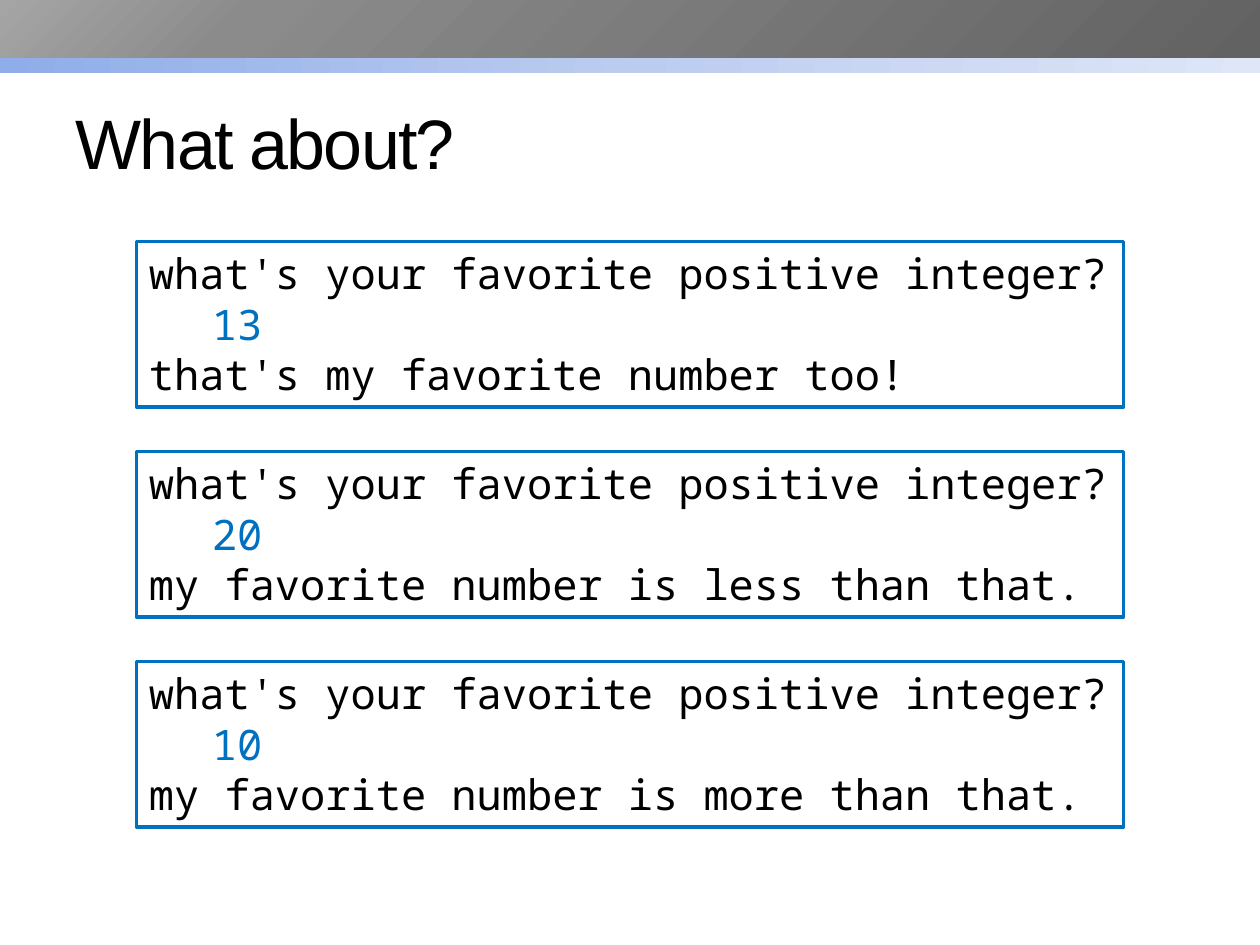
from copy import deepcopy

from pptx import Presentation
from pptx import util as u
from pptx.dml.color import RGBColor
from pptx.enum import shapes, text
from pptx.oxml.ns import qn

COLORS = {"ink": "000000", "paper": "FFFFFF", "accent": "0070C0"}
HEADING = "What about?"
QUESTION = "what's your favorite positive integer?"
DIALOGS = [
    ("13", "that's my favorite number too!"),
    ("20", "my favorite number is less than that."),
    ("10", "my favorite number is more than that."),
]
BANDS = [
    {"top": 17.28, "height": 24.48, "angle": 0,
     "stops": [(0, "8FADE9"), (0.5, "BCCCEF"), (1, "DEE6F7")]},
    {"top": 0, "height": 33.12, "angle": 135,
     "stops": [(0, "626262"), (0.8, "8B8B8B"), (1, "A5A5A5")]},
]
WIDTH, HEIGHT = 720, 540
BOX_LEFT, BOX_TOP, BOX_WIDTH, BOX_HEIGHT, BOX_PITCH = 78, 138, 564, 94.5, 120


def rgb(value):
    return RGBColor.from_string(value)


def add_rectangle(slide, left, top, width, height):
    rectangle = slide.shapes.add_shape(
        shapes.MSO_SHAPE.RECTANGLE, u.Pt(left), u.Pt(top), u.Pt(width), u.Pt(height))
    rectangle.shadow.inherit = False
    return rectangle


def add_band(slide, top, height, angle, stops):
    band = add_rectangle(slide, 0, top, WIDTH, height)
    band.line.fill.background()
    band.fill.gradient()
    band.fill.gradient_angle = angle
    stop_list = band._element.spPr.find(qn("a:gradFill")).find(qn("a:gsLst"))
    stop_list.append(deepcopy(stop_list[0]))
    for stop, (position, color) in zip(band.fill.gradient_stops, stops):
        stop.position = position
        stop.color.rgb = rgb(color)


def style_run(run, font, size, color):
    run.font.name = font
    run.font.size = u.Pt(size)
    run.font.color.rgb = rgb(color)


def add_dialog(slide, top, answer, reply):
    dialog = add_rectangle(slide, BOX_LEFT, top, BOX_WIDTH, BOX_HEIGHT)
    dialog.fill.solid()
    dialog.fill.fore_color.rgb = rgb(COLORS["paper"])
    dialog.line.color.rgb = rgb(COLORS["accent"])
    dialog.line.width = u.Pt(2.08)
    frame = dialog.text_frame
    frame.word_wrap = True
    frame.auto_size = text.MSO_AUTO_SIZE.SHAPE_TO_FIT_TEXT
    frame.vertical_anchor = text.MSO_ANCHOR.TOP
    frame.text = "\n".join([QUESTION, "\t" + answer, reply])
    for paragraph, color in zip(frame.paragraphs, ("ink", "accent", "ink")):
        paragraph.alignment = text.PP_ALIGN.LEFT
        style_run(paragraph.runs[0], "Noto Sans Mono", 24, COLORS[color])


def add_heading(slide):
    heading = slide.shapes.title
    heading.left, heading.top = u.Pt(36), u.Pt(41.76)
    heading.width, heading.height = u.Pt(648), u.Pt(77.76)
    frame = heading.text_frame
    frame.text = HEADING
    frame.vertical_anchor = text.MSO_ANCHOR.MIDDLE
    paragraph = frame.paragraphs[0]
    paragraph.alignment = text.PP_ALIGN.LEFT
    run = paragraph.runs[0]
    style_run(run, "Arial", 40, COLORS["ink"])
    run.font._element.set("spc", "-100")


def main():
    deck = Presentation()
    deck.slide_width, deck.slide_height = u.Pt(WIDTH), u.Pt(HEIGHT)
    slide = deck.slides.add_slide(deck.slide_layouts[5])
    for band in BANDS:
        add_band(slide, **band)
    add_heading(slide)
    for row, (answer, reply) in enumerate(DIALOGS):
        add_dialog(slide, BOX_TOP + row * BOX_PITCH, answer, reply)
    deck.save("out.pptx")


if __name__ == "__main__":
    main()
